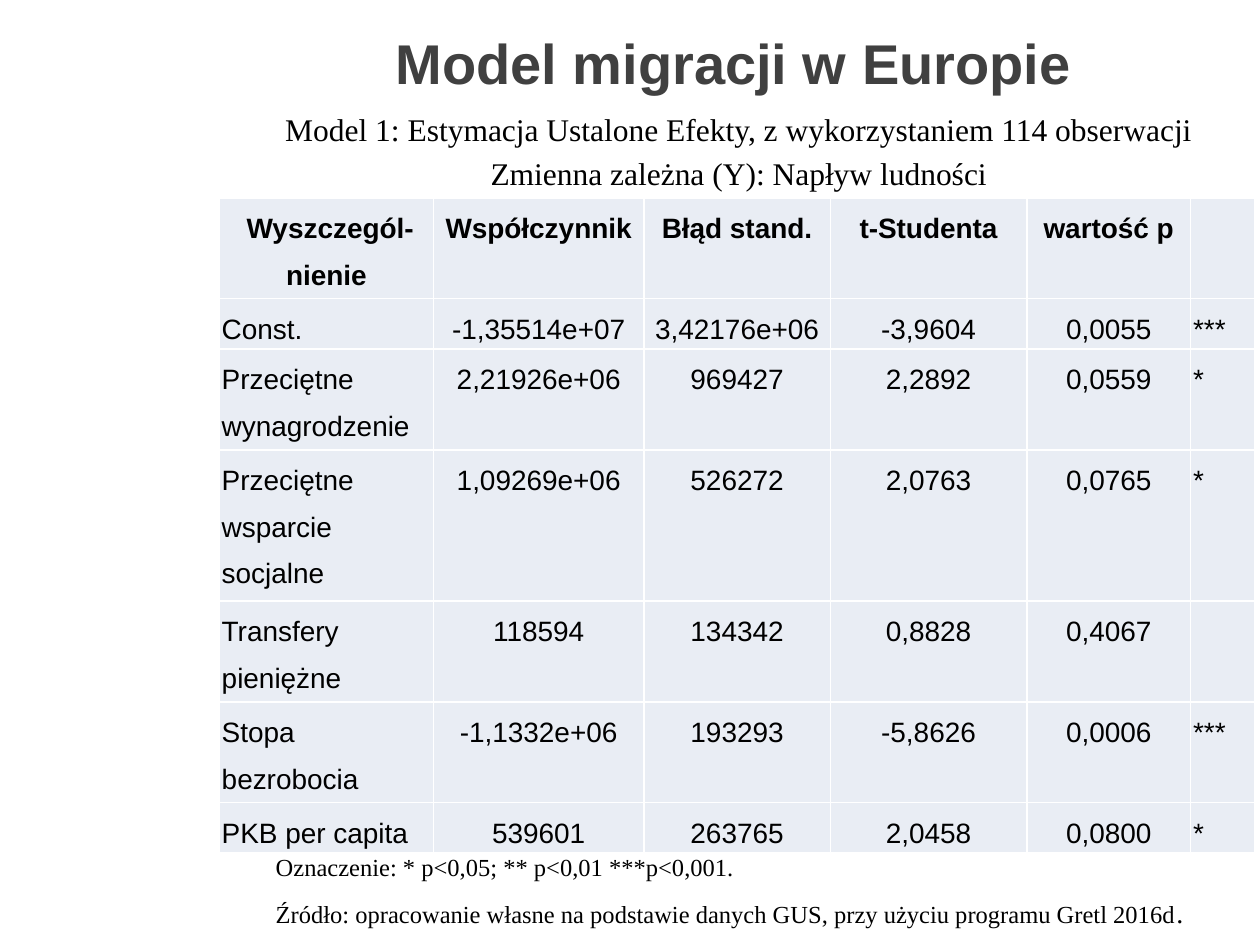
from lxml.etree import SubElement
from pptx import Presentation
from pptx.dml.color import RGBColor
from pptx.enum.text import MSO_ANCHOR, MSO_AUTO_SIZE, PP_ALIGN
from pptx.oxml.ns import qn
from pptx.util import Inches, Pt

BLACK = RGBColor(0x00, 0x00, 0x00)
GRAY = RGBColor(0x40, 0x40, 0x40)
PALE = RGBColor(0xE9, 0xED, 0xF4)
WHITE = RGBColor(0xFF, 0xFF, 0xFF)
LINE = 0.4  # height of one table text line, in inches

WIDTHS = [1.7, 1.67, 1.48, 1.56, 1.3, 0.51]
ROWS = [
    [" Wyszczegól-\nnienie", "Współczynnik", "Błąd stand.", "t-Studenta", "wartość p", ""],
    ["Const.", "-1,35514e+07", "3,42176e+06", "-3,9604", "0,0055", "***"],
    ["Przeciętne\nwynagrodzenie", "2,21926e+06", "969427", "2,2892", "0,0559", "*"],
    ["Przeciętne\nwsparcie\nsocjalne", "1,09269e+06", "526272", "2,0763", "0,0765", "*"],
    ["Transfery\npieniężne", "118594", "134342", "0,8828", "0,4067", ""],
    ["Stopa\nbezrobocia", "-1,1332e+06", "193293", "-5,8626", "0,0006", "***"],
    ["PKB per capita", "539601", "263765", "2,0458", "0,0800", "*"],
]


class Deck:
    sans = "Arial"
    serif = "Times New Roman"

    def __init__(self):
        self.prs = Presentation()
        self.prs.slide_width = Inches(10)
        self.prs.slide_height = Inches(7.5)
        self.slide = self.prs.slides.add_slide(self.prs.slide_layouts[5])

    def run(self, para, text, size, face, color=BLACK, bold=False):
        run = para.add_run()
        run.text = text
        font = run.font
        font.size, font.name, font.bold = Pt(size), face, bold
        font.color.rgb = color

    def place(self, shape, left, top, width, height):
        shape.left, shape.top = Inches(left), Inches(top)
        shape.width, shape.height = Inches(width), Inches(height)

    def title(self, text, *box):
        shape = self.slide.shapes.title
        self.place(shape, *box)
        frame = shape.text_frame
        frame.vertical_anchor = MSO_ANCHOR.MIDDLE
        para = frame.paragraphs[0]
        para.alignment = PP_ALIGN.CENTER
        self.run(para, text, 32, self.sans, GRAY, True)

    def text(self, paras, *box, align=PP_ALIGN.LEFT, space=None, after=None):
        """Add a text box; each paragraph is a list of (text, size) runs."""
        shape = self.slide.shapes.add_textbox(*map(Inches, box))
        frame = shape.text_frame
        frame.word_wrap = True
        frame.auto_size = MSO_AUTO_SIZE.SHAPE_TO_FIT_TEXT
        for i, runs in enumerate(paras):
            para = frame.add_paragraph() if i else frame.paragraphs[0]
            para.alignment = align
            para.line_spacing = space
            para.space_after = after
            for text, size in runs:
                self.run(para, text, size, self.serif)

    def border(self, cell):
        props = cell._tc.get_or_add_tcPr()
        for side in ("a:lnL", "a:lnR", "a:lnT", "a:lnB"):
            line = SubElement(props, qn(side), w=str(Pt(1)))
            fill = SubElement(line, qn("a:solidFill"))
            SubElement(fill, qn("a:srgbClr"), val=str(WHITE))

    def cell(self, cell, text, align, bold):
        self.border(cell)
        cell.fill.solid()
        cell.fill.fore_color.rgb = PALE
        cell.margin_left = cell.margin_right = Inches(0.02)
        cell.margin_top = cell.margin_bottom = 0
        frame = cell.text_frame
        if not text:
            frame.paragraphs[0].font.size = Pt(16)
            return
        for i, line in enumerate(text.split("\n")):
            para = frame.add_paragraph() if i else frame.paragraphs[0]
            para.alignment = align
            para.line_spacing = 1.5
            self.run(para, line, 16, self.sans, bold=bold)

    def table(self, rows, widths, left, top):
        lines = [row[0].count("\n") + 1 for row in rows]
        box = (left, top, sum(widths), LINE * sum(lines))
        grid = self.slide.shapes.add_table(len(rows), len(widths), *map(Inches, box)).table
        for col, width in zip(grid.columns, widths):
            col.width = Inches(width)
        for r, row in enumerate(rows):
            grid.rows[r].height = Inches(LINE * lines[r])
            for c, text in enumerate(row):
                edge = r > 0 and c in (0, len(widths) - 1)
                align = PP_ALIGN.LEFT if edge else PP_ALIGN.CENTER
                self.cell(grid.cell(r, c), text, align, r == 0)


def main():
    deck = Deck()
    deck.title("Model migracji w Europie ", 1.77, 0, 8.23, 0.99)
    deck.text(
        [
            [("Model 1: Estymacja Ustalone Efekty, z wykorzystaniem 114 obserwacji", 18)],
            [("Zmienna zależna (Y): Napływ ludności", 18)],
        ],
        1.75, 0.78, 8.23, 0.8, align=PP_ALIGN.CENTER, space=1.15,
    )
    deck.table(ROWS, WIDTHS, 1.74, 1.57)
    deck.text(
        [
            [("Oznaczenie: * p<0,05; ** p<0,01 ***p<0,001.", 14)],
            [
                ("Źródło: opracowanie własne na podstawie danych GUS, "
                 "przy użyciu programu Gretl 2016d", 14),
                (".", 16),
            ],
        ],
        2.09, 6.71, 7.4, 0.72, after=Pt(8),
    )
    deck.prs.save("out.pptx")


if __name__ == "__main__":
    main()
